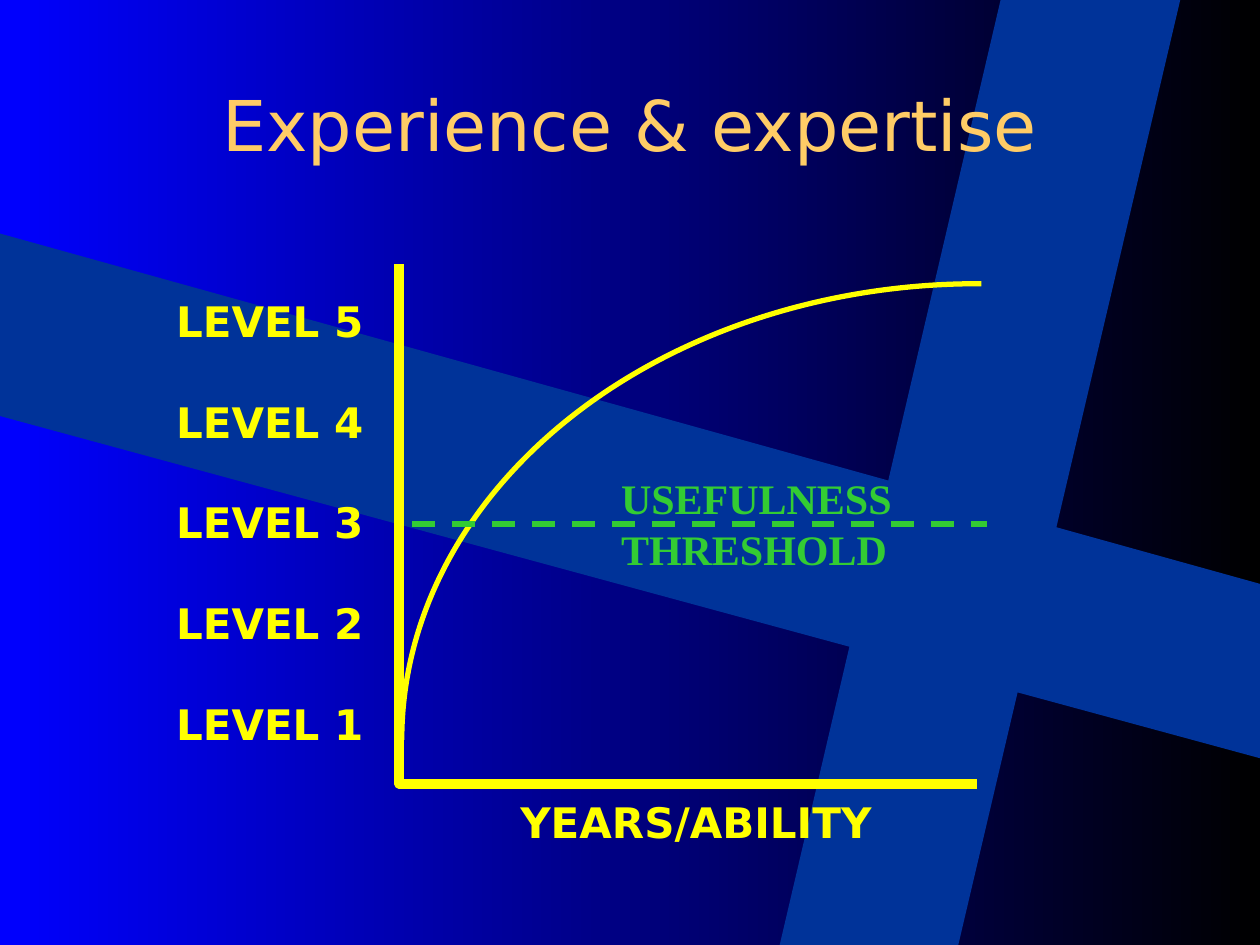
"""Build a slide that plots experience against levels of expertise."""
from lxml import etree
from pptx import Presentation
from pptx.dml.color import RGBColor
from pptx.enum.dml import MSO_LINE
from pptx.enum.shapes import MSO_CONNECTOR, MSO_SHAPE
from pptx.enum.text import MSO_ANCHOR, MSO_AUTO_SIZE, PP_ALIGN
from pptx.oxml.ns import qn
from pptx.util import Cm, Pt

BLUE = RGBColor(0x00, 0x00, 0xFF)
BLACK = RGBColor(0x00, 0x00, 0x00)
NAVY = RGBColor(0x00, 0x33, 0x99)
GOLD = RGBColor(0xFF, 0xCC, 0x66)
YELLOW = RGBColor(0xFF, 0xFF, 0x00)
GREEN = RGBColor(0x33, 0xCC, 0x33)
SANS = "DejaVu Sans"
SERIF = "Times New Roman"
DASH = MSO_LINE.DASH
STRAIGHT = MSO_CONNECTOR.STRAIGHT
ARC = MSO_SHAPE.ARC
MIDDLE = MSO_ANCHOR.MIDDLE
GROW = MSO_AUTO_SIZE.SHAPE_TO_FIT_TEXT
LEFT, CENTER = PP_ALIGN.LEFT, PP_ALIGN.CENTER


def write(frame, lines, size=24, font=SANS, color=YELLOW, bold=True,
          align=LEFT, pitch=Pt(29), gap=0):
    for i, line in enumerate(lines):
        para = frame.paragraphs[0] if i == 0 else frame.add_paragraph()
        para.text = line
        para.alignment = align
        para.line_spacing = pitch
        para.space_before = Pt(gap if i else 0)
        para.font.size = Pt(size)
        para.font.name = font
        para.font.bold = bold
        para.font.color.rgb = color


def outline(points, close):
    spots = [(Cm(x), Cm(y)) for x, y in points]
    pen = shapes.build_freeform(*spots[0], scale=1.0)
    pen.add_line_segments(spots[1:], close=close)
    form = pen.convert_to_shape()
    form.shadow.inherit = False
    return form


deck = Presentation()
deck.slide_width, deck.slide_height = Cm(25.4), Cm(19.05)
slide = deck.slides.add_slide(deck.slide_layouts[5])
shapes = slide.shapes

back = slide.background.fill
back.gradient()
back.gradient_angle = 0
for stop, color, place in zip(back.gradient_stops, (BLUE, BLACK), (0, 1)):
    stop.color.rgb = color
    stop.position = place

bands = [
    [(23.8, -0.03), (20.19, -0.08), (15.7, 19.13), (19.3, 19.13)],
    [(-0.03, 4.7), (-0.1, 8.36), (25.6, 15.34), (25.65, 11.84)],
]
for points in bands:
    band = outline(points, True)
    band.fill.solid()
    band.fill.fore_color.rgb = NAVY
    band.line.fill.background()

title = shapes.title
title.left, title.top = Cm(1.9), Cm(0.91)
title.width, title.height = Cm(21.59), Cm(3.18)
title.text_frame.vertical_anchor = MIDDLE
write(title.text_frame, ["Experience & expertise"], size=40, color=GOLD,
      bold=False, align=CENTER, pitch=1.0)
shapes.element.append(title.element)

axes = outline([(8.05, 5.33), (8.05, 15.8), (19.69, 15.8)], False)
curve = shapes.add_shape(ARC, Cm(8.1), Cm(5.72), Cm(23.24), Cm(18.39))
curve.shadow.inherit = False
curve.adjustments[0] = 108
curve.adjustments[1] = 162.23
for form, width in ((axes, 5.5), (curve, 3)):
    form.fill.background()
    form.line.color.rgb = YELLOW
    form.line.width = Pt(width)

limit = shapes.add_connector(STRAIGHT, Cm(8.31), Cm(10.57), Cm(19.89), Cm(10.57))
limit.line.color.rgb = GREEN
limit.line.width = Pt(3.25)
limit.line.dash_style = DASH
etree.SubElement(limit.element.spPr, qn("a:effectLst"))

levels = [f"LEVEL {n}" for n in range(5, 0, -1)]
labels = [
    (levels, (3.3, 5.82, 4.32, 9.5), {"gap": 28.6}),
    (["YEARS/ABILITY"], (10.24, 15.93, 8.26, 1.27), {}),
    (["USEFULNESS", "THRESHOLD"], (12.27, 9.4, 6.02, 2.31),
     {"font": SERIF, "color": GREEN}),
]
for lines, place, style in labels:
    frame = shapes.add_textbox(*map(Cm, place)).text_frame
    frame.word_wrap = False
    frame.auto_size = GROW
    write(frame, lines, **style)

deck.save("out.pptx")
